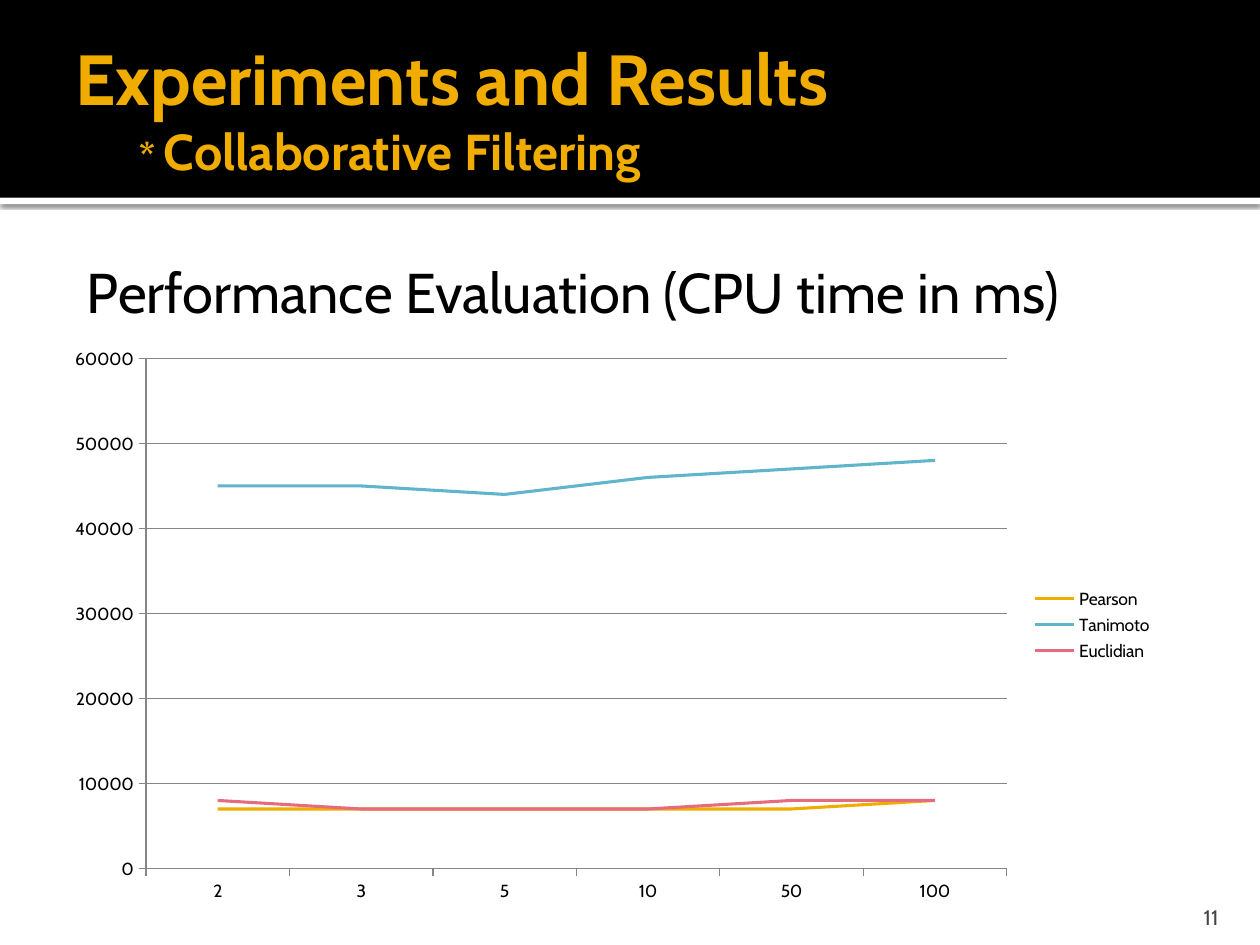
from lxml import etree
from pptx import Presentation
from pptx.chart import data
from pptx.dml.color import RGBColor
from pptx.enum import chart as ch, shapes, text
from pptx.oxml import ns
from pptx.util import Inches, Pt

FONT = "Cabin"
BLACK = RGBColor(0, 0, 0)
WHITE = RGBColor(255, 255, 255)
GOLD = RGBColor(0xF0, 0xAD, 0x00)
BLUE = RGBColor(0x60, 0xB5, 0xCC)
ROSE = RGBColor(0xE6, 0x6C, 0x7D)
GRAY = RGBColor(0x45, 0x45, 0x45)
RULE = RGBColor(0x86, 0x86, 0x86)

CATS = ["2", "3", "5", "10", "50", "100"]
SERIES = [
    ("Pearson", GOLD, [7000, 7000, 7000, 7000, 7000, 8000]),
    ("Tanimoto", BLUE, [45000, 45000, 44000, 46000, 47000, 48000]),
    ("Euclidian", ROSE, [8000, 7000, 7000, 7000, 8000, 8000]),
]


def style(font, size, color, bold=False):
    """Set the face, size, colour and weight of a font."""
    font.name, font.size, font.bold = FONT, Pt(size), bold
    font.color.rgb = color


def place(shape, box):
    """Move a shape to a box given in inches."""
    shape.left, shape.top, shape.width, shape.height = map(Inches, box)


def inset(shape, sides, anchor):
    """Set the margins and anchor of a shape's text, and return its frame."""
    frame = shape.text_frame
    frame.word_wrap = True
    frame.auto_size = text.MSO_AUTO_SIZE.NONE
    frame.vertical_anchor = anchor
    (frame.margin_left, frame.margin_top,
     frame.margin_right, frame.margin_bottom) = map(Inches, sides)
    return frame


def add_bar(slide, box, color):
    """Add a plain filled band."""
    bar = slide.shapes.add_shape(shapes.MSO_SHAPE.RECTANGLE, *map(Inches, box))
    bar.shadow.inherit = False
    bar.fill.solid()
    bar.fill.fore_color.rgb = color
    bar.line.fill.background()
    return bar


def add_shade(bar):
    """Give a band a soft shadow below it."""
    effects = bar._element.spPr.find(ns.qn("a:effectLst"))
    outer = etree.SubElement(
        effects, ns.qn("a:outerShdw"), blurRad=str(Pt(2.5)),
        dist=str(Pt(0.8)), dir="5400000", algn="tl", rotWithShape="0")
    color = etree.SubElement(outer, ns.qn("a:srgbClr"), val=str(BLACK))
    etree.SubElement(color, ns.qn("a:alpha"), val="60000")


def add_header(slide, box):
    """Draw the header bands behind the placeholders and fill the title."""
    left, top, width, height = box
    strip = add_bar(slide, (left, top + height, width, 0.05), WHITE)
    add_shade(strip)
    band = add_bar(slide, box, BLACK)
    tree = slide.shapes._spTree
    for index, bar in enumerate((strip, band), 2):
        tree.insert(index, bar._element)

    title = slide.shapes.title
    place(title, (left + 0.5, top + 0.17, width - 1, height - 0.2))
    frame = inset(title, (0.1, 0.05, 0.05, 0.05), text.MSO_ANCHOR.MIDDLE)
    frame.text = "Experiments and Results\v"
    para = frame.paragraphs[0]
    para.alignment = text.PP_ALIGN.LEFT
    for part in ("\t* ", "Collaborative Filtering"):
        para.add_run().text = part
    for run, size in zip(para.runs, (40.5, 21.6, 28.8)):
        style(run.font, size, GOLD, True)


def add_lead(slide, box):
    """Fill the body placeholder with the chart's heading."""
    body = slide.placeholders[1]
    place(body, box)
    frame = inset(body, (0.06, 0.1, 0.1, 0.05), text.MSO_ANCHOR.TOP)
    frame.text = "Performance Evaluation (CPU time in ms)"
    para = frame.paragraphs[0]
    para.space_before = Pt(0)
    props = para._p.get_or_add_pPr()
    props.set("marL", str(Inches(0.13)))
    props.set("indent", "0")
    etree.SubElement(props, ns.qn("a:buNone"))
    style(para.runs[0].font, 32, BLACK)


def add_plot(slide, box):
    """Add the line chart of CPU times."""
    source = data.CategoryChartData()
    source.categories = CATS
    for name, _, values in SERIES:
        source.add_series(name, values)
    chart = slide.shapes.add_chart(
        ch.XL_CHART_TYPE.LINE, *map(Inches, box), source).chart
    style(chart.font, 10, BLACK)
    chart.has_title = False
    chart.has_legend = True
    chart.legend.position = ch.XL_LEGEND_POSITION.RIGHT
    chart.legend.include_in_layout = False
    plot = chart.plots[0]
    plot.vary_by_categories = False
    for line, (_, color, _) in zip(plot.series, SERIES):
        line.smooth = False
        line.marker.style = ch.XL_MARKER_STYLE.NONE
        line.format.line.width = Pt(1.75)
        line.format.line.color.rgb = color
    for axis in (chart.category_axis, chart.value_axis):
        axis.major_tick_mark = ch.XL_TICK_MARK.OUTSIDE
        axis.format.line.color.rgb = RULE
    scale = chart.value_axis
    scale.minimum_scale, scale.maximum_scale = 0, 60000
    scale.major_unit = 10000
    scale.has_major_gridlines = True
    scale.major_gridlines.format.line.color.rgb = RULE


def add_page(slide, box):
    """Add the page number."""
    note = slide.shapes.add_textbox(*map(Inches, box))
    frame = inset(note, (0.1, 0.05, 0.1, 0), text.MSO_ANCHOR.BOTTOM)
    frame.text = "11"
    para = frame.paragraphs[0]
    para.alignment = text.PP_ALIGN.RIGHT
    style(para.runs[0].font, 12, GRAY)


def main():
    """Build the slide and save it."""
    deck = Presentation()
    deck.slide_width, deck.slide_height = Inches(10), Inches(7.5)
    slide = deck.slides.add_slide(deck.slide_layouts[1])
    add_header(slide, (0, 0, 10, 1.57))
    add_lead(slide, (0.5, 1.94, 9, 0.73))
    add_page(slide, (8.97, 7.08, 0.8, 0.3))
    add_plot(slide, (0.42, 2.67, 8.83, 4.58))
    deck.save("out.pptx")


if __name__ == "__main__":
    main()
